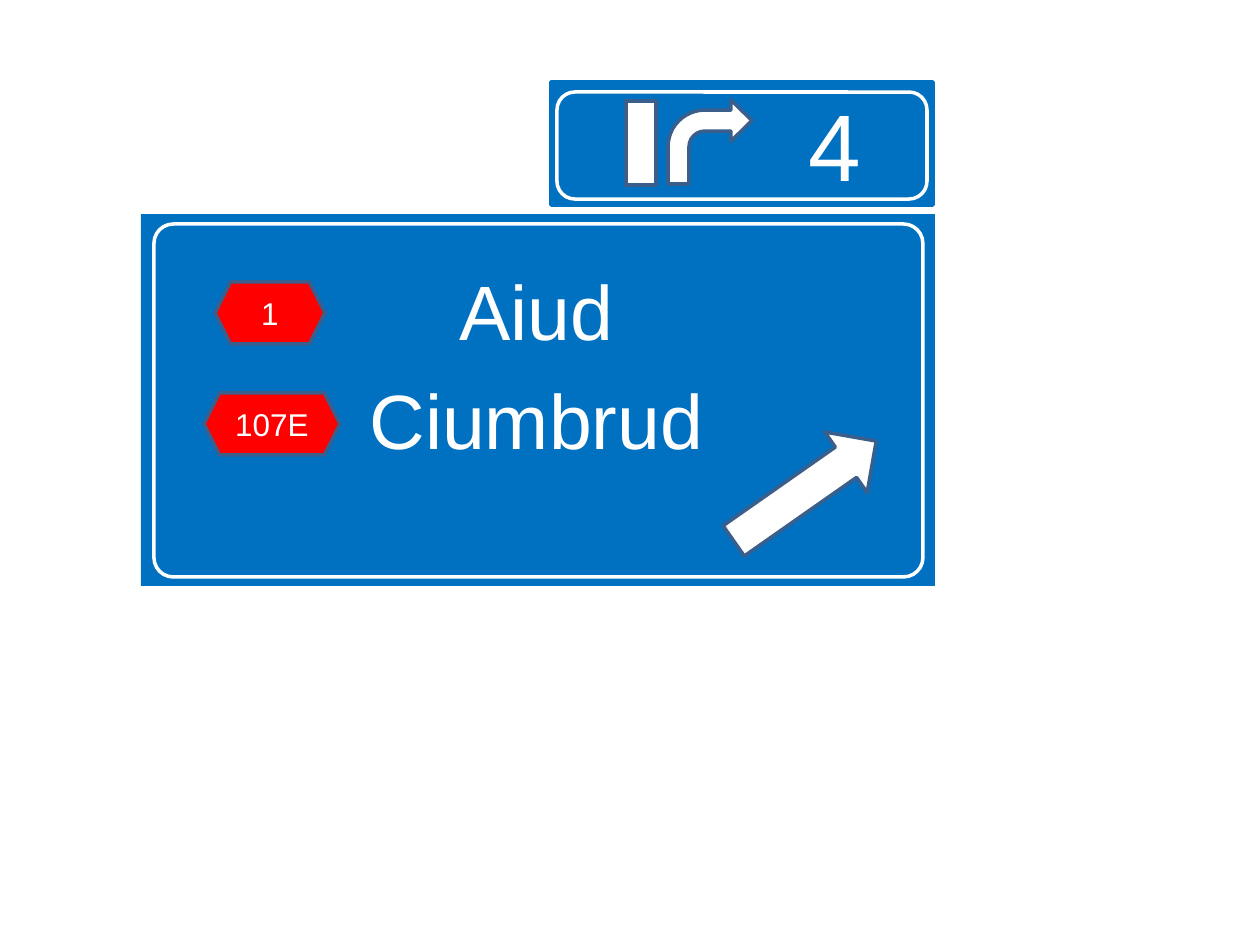
from pptx import Presentation
from pptx.dml.color import RGBColor
from pptx.enum.shapes import MSO_SHAPE as Kind
from pptx.enum.text import MSO_ANCHOR as Anchor, PP_ALIGN as Align
from pptx.util import Emu, Pt

SCALE = 914400 / 126
BLUE, WHITE, RED, EDGE = "0070C0", "FFFFFF", "FF0000", "3A5F8C"


def px(n):
    """Turn pixels into EMU."""
    return Emu(round(n * SCALE))


def color(code):
    """Turn a hex string into a colour."""
    return RGBColor.from_string(code)


def draw(slide, kind, box, fill=None, line=None, adj=()):
    """Add a flat shape with an optional fill and line."""
    shape = slide.shapes.add_shape(kind, *map(px, box))
    shape.shadow.inherit = False
    if fill:
        shape.fill.solid()
        shape.fill.fore_color.rgb = color(fill)
    else:
        shape.fill.background()
    if line:
        shape.line.color.rgb = color(line)
        shape.line.width = Pt(2)
    else:
        shape.line.fill.background()
    for i, value in enumerate(adj):
        shape.adjustments[i] = value
    return shape


def write(shape, lines, size, pads=(13, 6, 13, 6), anchor=Anchor.MIDDLE, gap=0):
    """Write centred white lines in a shape."""
    frame = shape.text_frame
    frame.word_wrap = True
    frame.vertical_anchor = anchor
    frame.margin_left, frame.margin_top, frame.margin_right, frame.margin_bottom = map(px, pads)
    frame.text = "\n".join(lines)
    for para in frame.paragraphs:
        para.alignment = Align.CENTER
        para.space_before = Pt(gap)
        para.font.name = "Arial"
        para.font.size = Pt(size)
        para.font.color.rgb = color(WHITE)


def route(slide, box, name):
    """Add a red road number badge."""
    write(draw(slide, Kind.HEXAGON, box, RED, EDGE), [name], 18)


def town_sign(slide, x, y, w, h):
    """Place the large sign with towns, roads and exit arrow."""
    board = draw(slide, Kind.RECTANGLE, (x, y, w, h), BLUE)
    write(board, ["Aiud", "Ciumbrud"], 44, (10, 49, 13, 30), Anchor.TOP, 10)
    draw(slide, Kind.ROUNDED_RECTANGLE, (x + 13, y + 10, w - 25, h - 19), line=WHITE, adj=[0.055])
    arrow = draw(slide, Kind.RIGHT_ARROW, (x + 577, y + 240, 174, 74), WHITE, EDGE)
    arrow.rotation = 325
    route(slide, (x + 74, y + 68, 110, 62), "1")
    route(slide, (x + 63, y + 179, 136, 62), "107E")


def exit_sign(slide, x, y, w, h):
    """Place the small sign with the exit symbol and number."""
    board = draw(slide, Kind.ROUNDED_RECTANGLE, (x, y, w, h), BLUE, BLUE, [0])
    write(board, ["4"], 54, (198, 6, 13, 6))
    draw(slide, Kind.RECTANGLE, (x + 75, y + 19, 30, 84), WHITE, EDGE)
    draw(slide, Kind.BENT_ARROW, (x + 117, y + 18, 84, 84), WHITE, EDGE, [0.25, 0.245, 0.25, 0.438])
    draw(slide, Kind.ROUNDED_RECTANGLE, (x + 6, y + 10, w - 12, h - 16), line=WHITE)


def main():
    """Build and save the slide."""
    deck = Presentation()
    deck.slide_width, deck.slide_height = px(1260), px(945)
    slide = deck.slides.add_slide(deck.slide_layouts[6])
    town_sign(slide, 141, 214, 794, 372)
    exit_sign(slide, 551, 82, 382, 123)
    deck.save("out.pptx")


if __name__ == "__main__":
    main()
